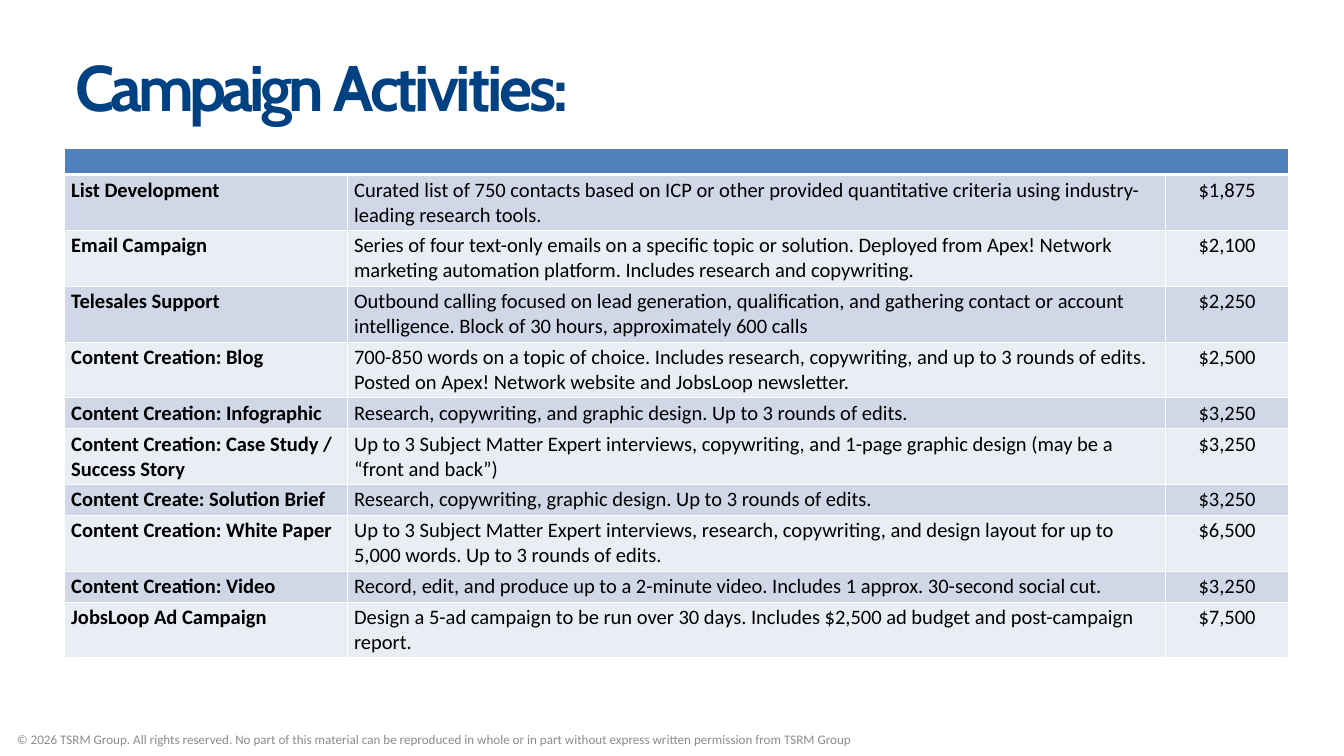
from pptx import Presentation
from pptx.dml.color import RGBColor
from pptx.enum.text import MSO_ANCHOR, MSO_AUTO_SIZE, PP_ALIGN
from pptx.oxml import parse_xml
from pptx.oxml.ns import nsdecls
from pptx.util import Emu, Inches, Pt

LEFT, CENTER = PP_ALIGN.LEFT, PP_ALIGN.CENTER
TOP, GROW = MSO_ANCHOR.TOP, MSO_AUTO_SIZE.SHAPE_TO_FIT_TEXT
WIDE, HIGH = Inches(20), Inches(11.25)

THEME = {
    "title": {"name": "Cabin", "size": Pt(69), "bold": True, "color": "004181"},
    "name": {"name": "Calibri", "size": Pt(22), "bold": True, "color": "000000"},
    "body": {"name": "Calibri", "size": Pt(22), "bold": False, "color": "000000"},
    "foot": {"name": "Calibri", "size": Pt(14), "bold": False, "color": "8C8C8C"},
    "head": "4F81BD",
    "bands": ("D0D8E8", "E9EDF4"),
    "rule": "FFFFFF",
}

# Title words with their letter spacing in hundredths of a point
TITLE = [("Campaign ", -480), ("Activities:", -340)]
FOOT = ("© 2026 TSRM Group. All rights reserved. No part of this material can be reproduced "
        "in whole or in part without express written permission from TSRM Group")

# Activity, details, price, lines of text
ROWS = [
    ("List Development",
     "Curated list of 750 contacts based on ICP or other provided quantitative criteria "
     "using industry-leading research tools.", "$1,875", 2),
    ("Email Campaign",
     "Series of four text-only emails on a specific topic or solution. Deployed from Apex! Network "
     "marketing automation platform. Includes research and copywriting.", "$2,100", 2),
    ("Telesales Support",
     "Outbound calling focused on lead generation, qualification, and gathering contact or account "
     "intelligence. Block of 30 hours, approximately 600 calls", "$2,250", 2),
    ("Content Creation: Blog",
     "700-850 words on a topic of choice. Includes research, copywriting, and up to 3 rounds of edits. "
     "Posted on Apex! Network website and JobsLoop newsletter.", "$2,500", 2),
    ("Content Creation: Infographic",
     "Research, copywriting, and graphic design. Up to 3 rounds of edits.", "$3,250", 1),
    ("Content Creation: Case Study / Success Story",
     "Up to 3 Subject Matter Expert interviews, copywriting, and 1-page graphic design "
     "(may be a “front and back”)", "$3,250", 2),
    ("Content Create: Solution Brief",
     "Research, copywriting, graphic design. Up to 3 rounds of edits.", "$3,250", 1),
    ("Content Creation: White Paper",
     "Up to 3 Subject Matter Expert interviews, research, copywriting, and design layout for up to "
     "5,000 words. Up to 3 rounds of edits.", "$6,500", 2),
    ("Content Creation: Video",
     "Record, edit, and produce up to a 2-minute video. Includes 1 approx. 30-second social cut.",
     "$3,250", 1),
    ("JobsLoop Ad Campaign",
     "Design a 5-ad campaign to be run over 30 days. Includes $2,500 ad budget and post-campaign "
     "report.", "$7,500", 2),
]
SHARES = (4.21, 12.18, 1.82)
HEAD, LINE, PAD = Inches(0.39), Inches(0.37), Inches(0.09)


def area(left, top, width, height):
    """Turn percentages of the slide into a box."""
    return [Emu(round(side * part / 100)) for side, part in
            zip((WIDE, HIGH, WIDE, HIGH), (left, top, width, height))]


def apply(item, values):
    for key, value in values.items():
        setattr(item, key, value)


def style(font, look):
    apply(font, {key: value for key, value in look.items() if key != "color"})
    font.color.rgb = RGBColor.from_string(look["color"])


def write(par, text, look, align=LEFT):
    par.alignment = align
    run = par.add_run()
    run.text = text
    style(run.font, look)
    return run


def frame(shape, top=0):
    apply(shape.text_frame, {
        "margin_left": 0, "margin_right": 0, "margin_top": top, "margin_bottom": 0,
        "word_wrap": True, "vertical_anchor": TOP, "auto_size": GROW})
    return shape.text_frame.paragraphs[0]


def title(slide, box):
    shape = slide.shapes.title
    apply(shape, dict(zip(("left", "top", "width", "height"), box)))
    par = frame(shape, Inches(0.02))
    par.space_before = Pt(1.4)
    props = par._p.get_or_add_pPr()
    props.set("marL", str(Inches(0.17)))
    props.set("indent", "0")
    for text, gap in TITLE:
        run = write(par, text, THEME["title"])
        run._r.get_or_add_rPr().set("spc", str(gap))


def footer(slide, box):
    shape = slide.shapes.add_textbox(*box)
    write(frame(shape), FOOT, THEME["foot"])


def paint(cell, color, edges):
    """Draw the cell's edges, then its fill."""
    props = cell._tc.get_or_add_tcPr()
    for side, points in edges.items():
        props.append(parse_xml(
            f'<a:ln{side} {nsdecls("a")} w="{Pt(points)}"><a:solidFill>'
            f'<a:srgbClr val="{THEME["rule"]}"/></a:solidFill></a:ln{side}>'))
    cell.fill.solid()
    cell.fill.fore_color.rgb = RGBColor.from_string(color)
    apply(cell, {"margin_left": Inches(0.1), "margin_right": Inches(0.1),
                 "margin_top": PAD // 2, "margin_bottom": PAD // 2})


def prices(slide, box):
    table = slide.shapes.add_table(len(ROWS) + 1, len(SHARES), *box).table
    for col, share in zip(table.columns, SHARES):
        col.width = Emu(round(box[2] * share / sum(SHARES)))

    # Header band
    table.rows[0].height = HEAD
    for cell in table.rows[0].cells:
        paint(cell, THEME["head"], {"L": 1, "R": 1, "T": 1, "B": 3})
        cell.text_frame.paragraphs[0].font.size = Pt(16)
    table.cell(0, 0).merge(table.cell(0, len(SHARES) - 1))

    # Activity rows
    looks = [("name", LEFT), ("body", LEFT), ("body", CENTER)]
    for num, (*texts, lines) in enumerate(ROWS, 1):
        row = table.rows[num]
        row.height = LINE * lines + PAD
        edges = {"L": 1, "R": 1, "T": 3 if num == 1 else 1, "B": 1}
        for cell, text, (look, align) in zip(row.cells, texts, looks):
            paint(cell, THEME["bands"][(num - 1) % 2], edges)
            write(cell.text_frame.paragraphs[0], text, THEME[look], align)


def main():
    deck = Presentation()
    apply(deck, {"slide_width": WIDE, "slide_height": HIGH})
    slide = deck.slides.add_slide(deck.slide_layouts[5])
    title(slide, area(4.8, 6.04, 90.4, 10.49))
    footer(slide, area(1.25, 96.71, 98.75, 2.13))
    prices(slide, area(4.8, 19.64, 91.05, 67.82))
    deck.save("out.pptx")


if __name__ == "__main__":
    main()
